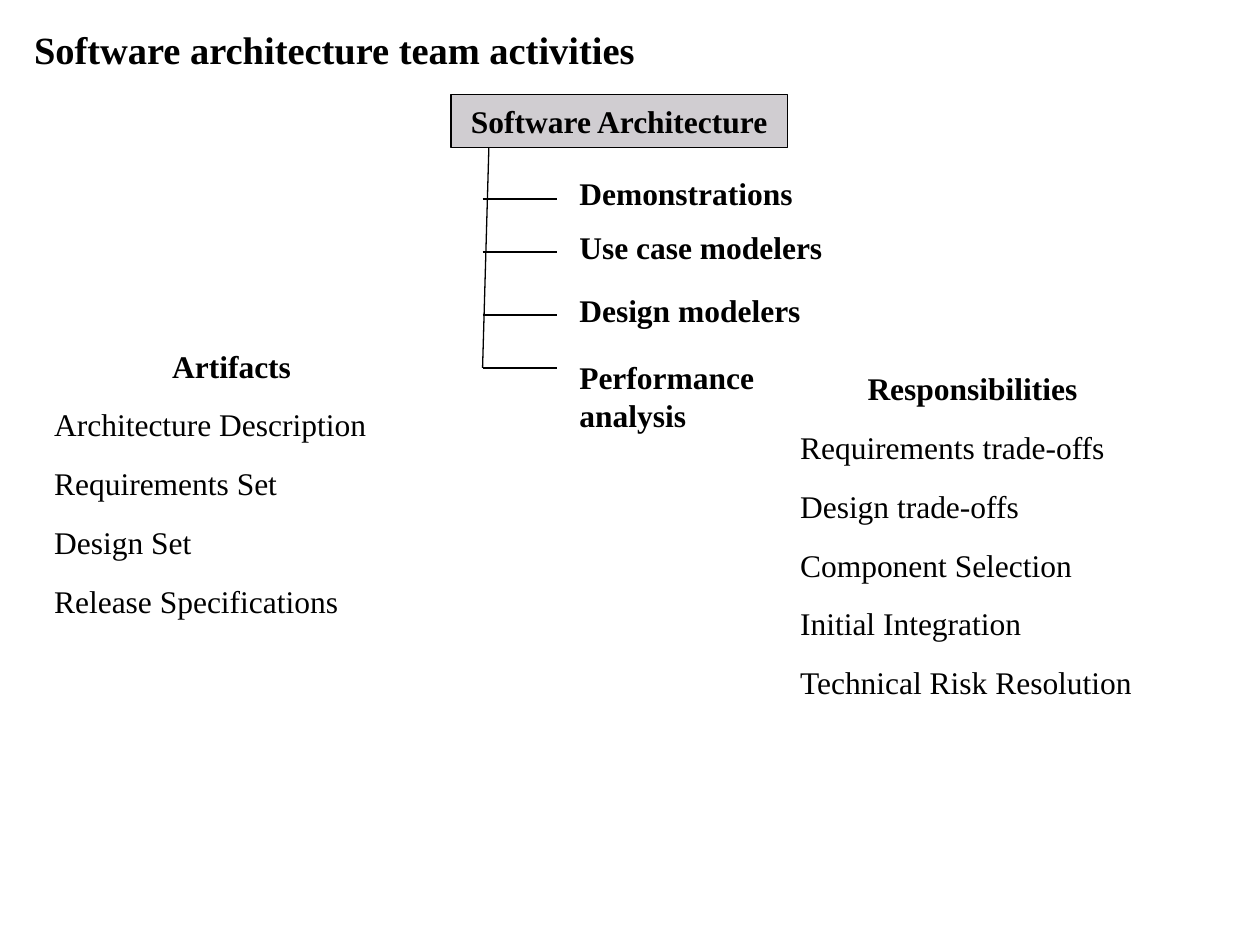
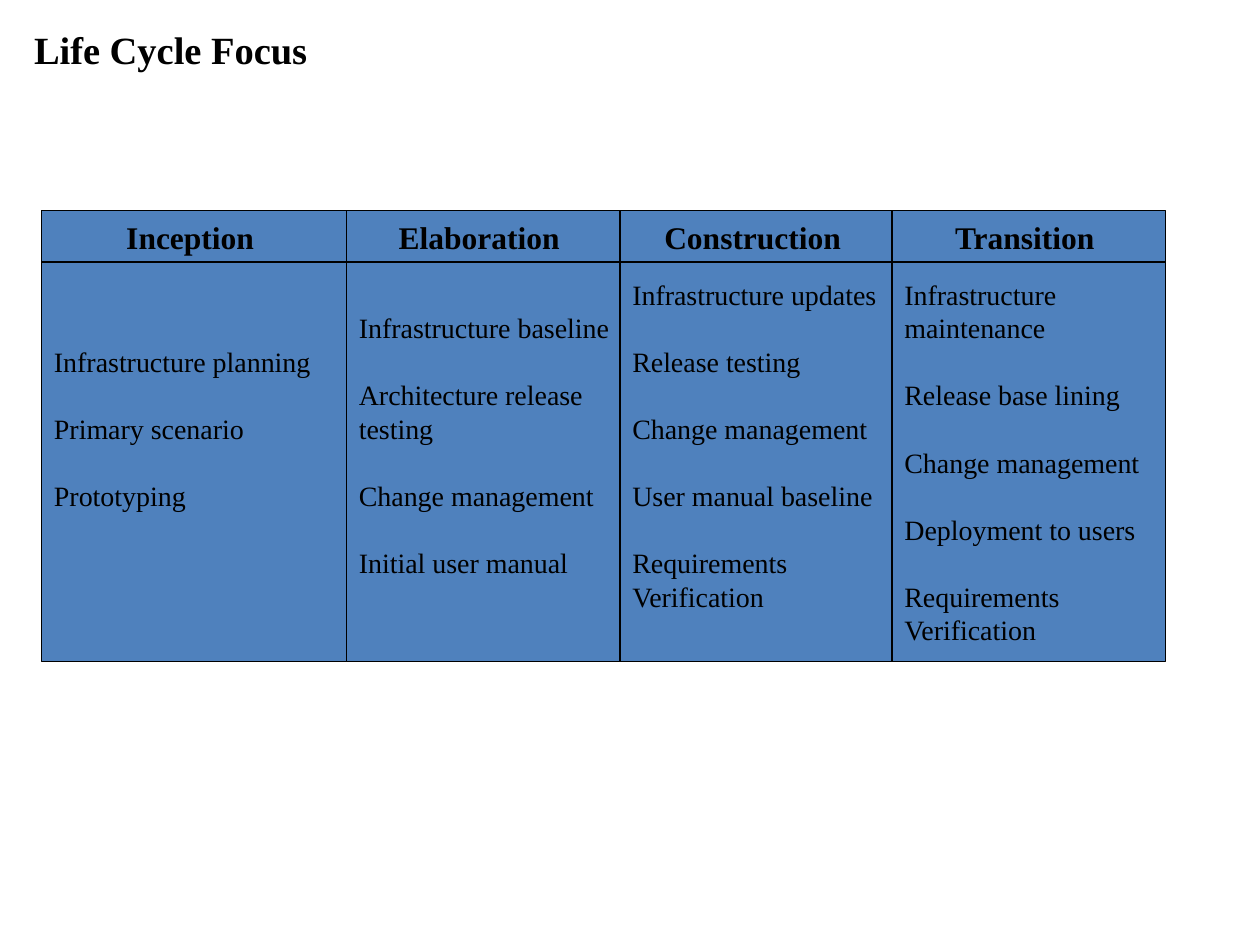
"""Build two slides on software architecture team work and life cycle focus."""
import pptx
import pptx.util
import pptx.dml.color
import pptx.enum.shapes
import pptx.enum.text
import pptx.oxml
import pptx.oxml.ns
import lxml.etree

Inches = pptx.util.Inches
Pt = pptx.util.Pt
Align = pptx.enum.text.PP_ALIGN
Anchor = pptx.enum.text.MSO_ANCHOR
LINE = pptx.enum.shapes.MSO_CONNECTOR.STRAIGHT
BOX = pptx.enum.shapes.MSO_SHAPE.RECTANGLE
qn = pptx.oxml.ns.qn

FONT = "Times New Roman"
BLACK = "000000"
GREY = "D0CDD1"
BLUE = "4F81BD"


def paint(fill, color):
    fill.solid()
    fill.fore_color.rgb = pptx.dml.color.RGBColor.from_string(color)


def write(frame, lines, size=18, bold=False, head=False, align=Align.LEFT,
          anchor=Anchor.TOP, gap=0):
    frame.word_wrap = True
    frame.vertical_anchor = anchor
    for i, line in enumerate(lines):
        para = frame.paragraphs[0] if i == 0 else frame.add_paragraph()
        top = head and i == 0
        para.alignment = Align.CENTER if top else align
        para.space_before = Pt(gap if i else 0)
        run = para.add_run()
        run.text = line
        run.font.name = FONT
        run.font.size = Pt(size)
        run.font.bold = bold or top
        paint(run.font.fill, BLACK)


deck = pptx.Presentation()
deck.slide_width = Inches(10)
deck.slide_height = Inches(7.5)

team = deck.slides.add_slide(deck.slide_layouts[3])
cycle = deck.slides.add_slide(deck.slide_layouts[5])
titles = [(team, "Software architecture team activities"),
          (cycle, "Life Cycle Focus")]
for slide, text in titles:
    title = slide.shapes.title
    title.left, title.top = Inches(0.17), Inches(0.16)
    title.width, title.height = Inches(9.67), Inches(0.5)
    title.text_frame.auto_size = pptx.enum.text.MSO_AUTO_SIZE.NONE
    write(title.text_frame, [text], size=22, bold=True)

PITCH = 19.2
phases = [
    ("Inception ", 0.33, 2.42, 2,
     ["Infrastructure planning", "Primary scenario", "Prototyping"]),
    ("Elaboration ", 2.75, 2.17, 1,
     ["Infrastructure baseline", "Architecture release testing",
      "Change management", "Initial user manual"]),
    ("Construction ", 4.92, 2.17, 0,
     ["Infrastructure updates", "Release testing", "Change management",
      "User manual baseline", "Requirements Verification"]),
    ("Transition ", 7.08, 2.17, 0,
     ["Infrastructure maintenance", "Release base lining", "Change management",
      "Deployment to users", "Requirements Verification"]),
]
mid = {"bold": True, "align": Align.CENTER, "anchor": Anchor.MIDDLE}
boxes = [(team, (3.58, 0.75, 2.67, 0.42), GREY, ["Software Architecture"], mid, None)]
for phase, left, width, skip, tasks in phases:
    boxes.append((cycle, (left, 1.67, width, 0.42), BLUE, [phase], mid, None))
    boxes.append((cycle, (left, 2.08, width, 3.17), BLUE, tasks,
                  {"size": 16, "gap": PITCH}, skip))
for slide, place, color, lines, form, skip in boxes:
    box = slide.shapes.add_shape(BOX, *map(Inches, place))
    box.shadow.inherit = False
    paint(box.fill, color)
    paint(box.line.fill, BLACK)
    box.line.width = Pt(0.75)
    write(box.text_frame, lines, **form)
    if skip is not None:
        box.text_frame.margin_top = Inches(0.12) + Pt(PITCH * skip)
        box.text_frame.margin_right = Inches(0.02)
        box.text_frame.margin_bottom = 0

roles = [("Demonstrations", 1.58, 1.33, 2.33, 0.4),
         ("Use case modelers", 2, 1.76, 2.6, 0.4),
         ("Design modelers", 2.5, 2.26, 2.33, 0.4),
         ("Performance analysis", 2.92, 2.79, 2.17, 0.71)]
links = [(3.88, 1.17, 3.83, 2.92)]
for role, y, top, width, height in roles:
    links.append((3.83, y, 4.42, y))
    label = team.shapes.add_textbox(Inches(4.5), Inches(top), Inches(width), Inches(height))
    write(label.text_frame, [role], bold=True)

for ends in links:
    link = team.shapes.add_connector(LINE, *map(Inches, ends))
    paint(link.line.fill, BLACK)
    link.line.width = Pt(0.75)
    lxml.etree.SubElement(link._element.spPr, qn("a:effectLst"))

lists = [
    (1, (0.33, 2.7, 3.08, 2.29),
     ["Artifacts ", "Architecture Description", "Requirements Set",
      "Design Set", "Release Specifications"]),
    (2, (6.25, 2.88, 3, 2.76),
     ["Responsibilities ", "Requirements trade-offs", "Design trade-offs",
      "Component Selection", "Initial Integration", "Technical Risk Resolution"]),
]
for slot, place, lines in lists:
    body = team.placeholders[slot]
    body.left, body.top, body.width, body.height = map(Inches, place)
    body.text_frame.auto_size = pptx.enum.text.MSO_AUTO_SIZE.NONE
    write(body.text_frame, lines, head=True, gap=12)
    for para in body.text_frame.paragraphs:
        props = para._p.get_or_add_pPr()
        props.set("marL", "0")
        props.set("indent", "0")
        lxml.etree.SubElement(props, qn("a:buNone"))

deck.save("out.pptx")
